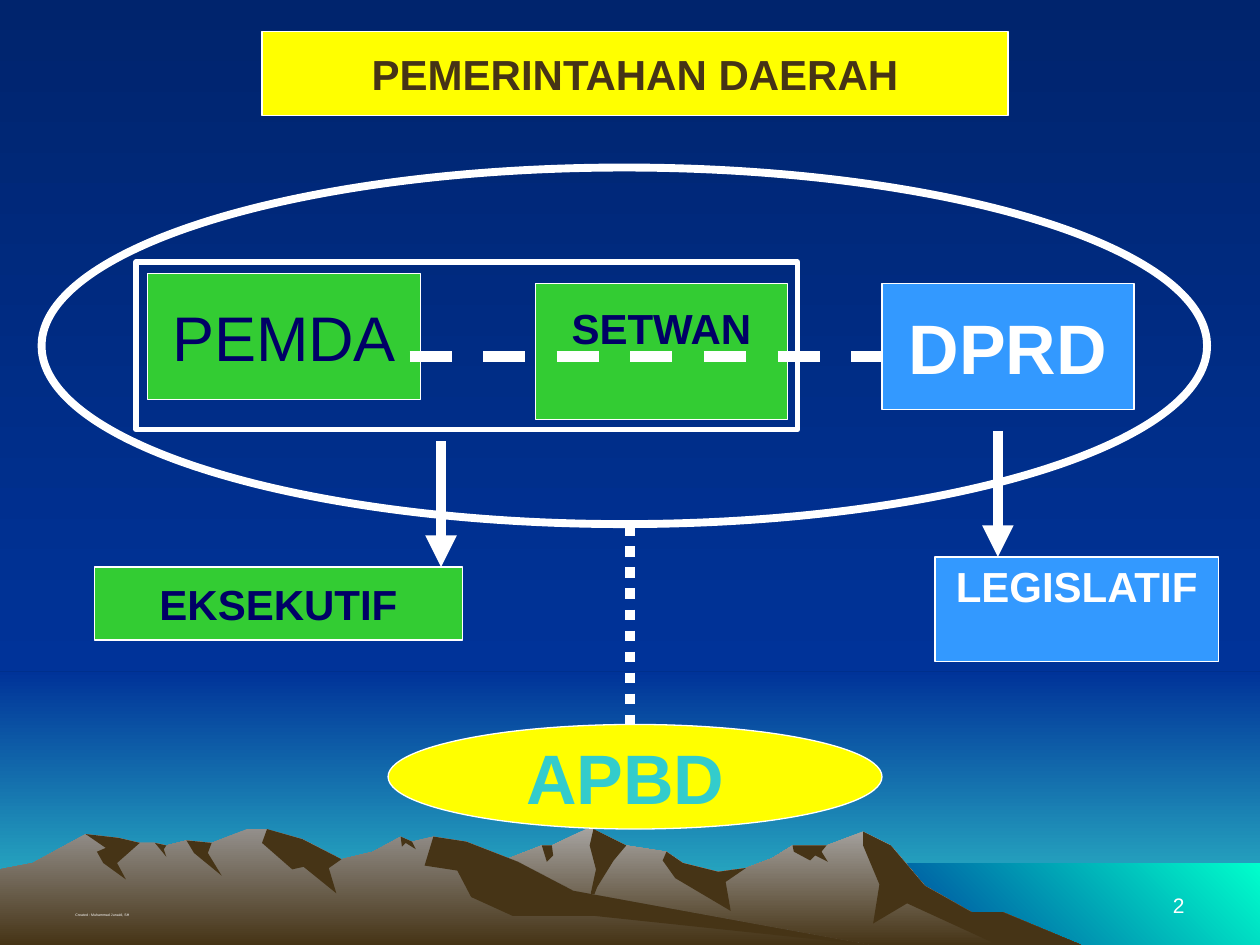
"""Build the slide on regional government: executive, legislature and budget."""
from dataclasses import dataclass
from typing import NamedTuple

from lxml.etree import SubElement
from pptx import Presentation
from pptx.dml.color import RGBColor
from pptx.enum.dml import MSO_LINE
from pptx.enum.shapes import MSO_CONNECTOR, MSO_SHAPE
from pptx.enum.text import MSO_ANCHOR, PP_ALIGN
from pptx.oxml.ns import qn
from pptx.util import Pt

PX = 9144
WIDTH, HEIGHT, HORIZON = 1000, 750, 533


@dataclass(frozen=True)
class Theme:
    """Hold the colours, font and type sizes."""
    font: str = "Arial"
    night: str = "00246D"
    blue: str = "003399"
    turquoise: str = "33CCCC"
    sea: str = "00FFCC"
    near_rock: str = "938F8B"
    far_rock: str = "A5A29F"
    earth: str = "463416"
    yellow: str = "FFFF00"
    green: str = "33CC33"
    azure: str = "3399FF"
    navy: str = "000066"
    white: str = "FFFFFF"
    credit: int = 2
    number: int = 12
    label: int = 24
    branch: int = 36
    heading: int = 40


THEME = Theme()


class Shade(NamedTuple):
    """Describe a dark face hanging from the skyline between two x positions."""
    left: int
    right: int
    lower_edge: tuple


class Range(NamedTuple):
    """Describe a mountain range by its rock, its skyline and its dark faces."""
    rock: str
    skyline: tuple
    shades: tuple


FAR_RANGE = Range(
    THEME.far_rock,
    ((258, 750), (327, 709), (394, 685), (430, 671), (438, 671), (465, 658), (471, 658),
     (497, 671), (529, 676), (542, 685), (570, 692), (592, 689), (613, 681), (629, 671),
     (656, 671), (685, 660), (707, 671), (734, 703), (771, 724), (796, 724), (858, 750)),
    (Shade(430, 438, ((439, 679), (434, 684))),
     Shade(471, 497, ((487, 683), (474, 704), (465, 727), (473, 690), (468, 671))),
     Shade(529, 592, ((576, 700), (580, 723), (536, 697), (526, 683))),
     Shade(629, 656, ((652, 676), (657, 684), (647, 679), (643, 683), (630, 676))),
     Shade(685, 858, ((792, 750), (720, 717), (693, 733), (698, 702), (685, 671)))))

NEAR_RANGE = Range(
    THEME.near_rock,
    ((0, 690), (26, 685), (68, 662), (94, 665), (111, 669), (123, 669), (132, 671),
     (148, 667), (168, 669), (196, 658), (212, 658), (240, 666), (271, 682), (296, 676),
     (318, 664), (327, 668), (344, 664), (370, 668), (411, 684), (455, 707), (690, 750)),
    (Shade(68, 111, ((93, 685), (100, 698), (82, 685), (77, 676), (84, 673))),
     Shade(123, 132, ((130, 674), (132, 680))),
     Shade(148, 168, ((165, 677), (176, 695), (154, 677))),
     Shade(212, 271, ((261, 689), (267, 709), (241, 688), (232, 690), (208, 669))),
     Shade(318, 327, ((330, 674), (322, 669), (319, 672))),
     Shade(344, 690, ((472, 727), (407, 727), (374, 712), (363, 691), (337, 687)))))


def rgb(value):
    """Turn a hex string into a colour."""
    return RGBColor.from_string(value)


def lengths(*values):
    """Turn px into EMU."""
    return [value * PX for value in values]


def paint(fill, *colours, angle=270):
    """Fill with nothing, one colour or a gradient of two."""
    if not colours:
        fill.background()
    elif len(colours) == 1:
        fill.solid()
        fill.fore_color.rgb = rgb(colours[0])
    else:
        fill.gradient()
        fill.gradient_angle = angle
        for stop, colour in zip(fill.gradient_stops, colours):
            stop.color.rgb = rgb(colour)


def write(shape, text, *, size=THEME.label, colour=THEME.white, bold=True,
          align=PP_ALIGN.CENTER, anchor=MSO_ANCHOR.MIDDLE, wrap=False, bottom=5):
    """Put formatted text into a shape."""
    frame = shape.text_frame
    frame.word_wrap = wrap
    frame.vertical_anchor = anchor
    frame.margin_bottom = bottom * PX
    paragraph = frame.paragraphs[0]
    paragraph.text = text
    paragraph.alignment = align
    font = paragraph.font
    font.name, font.size, font.bold = THEME.font, Pt(size), bold
    font.color.rgb = rgb(colour)


def add_panel(slide, box, *colours, kind=MSO_SHAPE.RECTANGLE, outline=0.75, angle=270):
    """Add a preset shape with an optional fill and white outline."""
    panel = slide.shapes.add_shape(kind, *lengths(*box))
    panel.shadow.inherit = False
    paint(panel.fill, *colours, angle=angle)
    if outline:
        panel.line.color.rgb = rgb(THEME.white)
        panel.line.width = Pt(outline)
    else:
        panel.line.fill.background()
    return panel


def add_block(slide, text, box, fill, kind=MSO_SHAPE.RECTANGLE, **style):
    """Add a filled panel that carries a label."""
    write(add_panel(slide, box, fill, kind=kind), text, **style)


def add_rock(slide, points, *colours):
    """Add a closed piece of mountain."""
    builder = slide.shapes.build_freeform(*points[0], scale=PX)
    builder.add_line_segments(points[1:], close=True)
    rock = builder.convert_to_shape()
    rock.shadow.inherit = False
    paint(rock.fill, *colours)
    rock.line.fill.background()


def add_range(slide, mountains):
    """Stand a skyline on the slide's foot and hang its dark faces from it."""
    skyline = mountains.skyline
    foot = ((skyline[-1][0], HEIGHT), (skyline[0][0], HEIGHT))
    add_rock(slide, skyline + foot, mountains.rock, THEME.earth)
    for shade in mountains.shades:
        crest = tuple(point for point in skyline if shade.left <= point[0] <= shade.right)
        add_rock(slide, crest + shade.lower_edge, THEME.earth)


def add_link(slide, start, end, *, dash=None, arrow=False):
    """Add a thick white line, dashed or with an arrowhead."""
    link = slide.shapes.add_connector(MSO_CONNECTOR.STRAIGHT, *lengths(*start, *end))
    link.line.color.rgb = rgb(THEME.white)
    link.line.width = Pt(6)
    if dash:
        link.line.dash_style = dash
    if arrow:
        SubElement(link.line._get_or_add_ln(), qn("a:tailEnd"), type="triangle")
    SubElement(link._element.spPr, qn("a:effectLst"))


def add_footer(slide, left, text, **style):
    """Add a line of text at the foot of the slide."""
    footer = slide.shapes.add_textbox(*lengths(left, 683, 233, 50))
    write(footer, text, bold=False, anchor=MSO_ANCHOR.BOTTOM, wrap=True, **style)


def add_landscape(slide):
    """Draw the sky, sea and mountains."""
    t = THEME
    paint(slide.background.fill, t.night, t.blue)
    add_panel(slide, (0, HORIZON, WIDTH, HEIGHT - HORIZON), t.blue, t.turquoise, outline=0)
    add_panel(slide, (0, 0, WIDTH, HORIZON), t.night, t.blue, outline=0)
    add_panel(slide, (683, 685, 317, 65), t.blue, t.sea, outline=0, angle=45)
    for mountains in (FAR_RANGE, NEAR_RANGE):
        add_range(slide, mountains)


def add_diagram(slide):
    """Draw the branches of government and their links."""
    t = THEME
    oval = MSO_SHAPE.OVAL
    raised = 43
    add_block(slide, "PEMERINTAHAN DAERAH", (208, 25, 592, 67), t.yellow, colour=t.earth)
    add_block(slide, "PEMDA", (117, 217, 217, 100), t.green,
              size=t.branch, colour=t.navy, bold=False)
    add_block(slide, "DPRD", (700, 225, 200, 100), t.azure, size=t.heading)
    add_panel(slide, (33, 133, 925, 283), kind=oval, outline=4.5)
    add_block(slide, "APBD ", (308, 575, 392, 83), t.yellow, oval,
              size=t.heading, colour=t.turquoise)
    add_link(slide, (500, 417), (500, 575), dash=MSO_LINE.ROUND_DOT)
    add_block(slide, "SETWAN", (425, 225, 200, 108), t.green, colour=t.navy, bottom=raised)
    add_link(slide, (325, 283), (700, 283), dash=MSO_LINE.DASH)
    add_panel(slide, (108, 208, 525, 133), outline=3)
    for x, top in ((350, 350), (792, 342)):
        add_link(slide, (x, top), (x, top + 100), arrow=True)
    add_block(slide, "EKSEKUTIF", (75, 450, 292, 58), t.green, colour=t.navy)
    add_block(slide, "LEGISLATIF", (742, 442, 225, 83), t.azure, bottom=raised)


def main():
    """Build and save the slide."""
    deck = Presentation()
    deck.slide_width, deck.slide_height = lengths(WIDTH, HEIGHT)
    slide = deck.slides.add_slide(deck.slide_layouts[6])
    add_landscape(slide)
    add_footer(slide, 50, "Created : Muhammad Junaidi, SH", size=THEME.credit,
               align=PP_ALIGN.LEFT)
    add_footer(slide, 717, "2", size=THEME.number, align=PP_ALIGN.RIGHT)
    add_diagram(slide)
    deck.save("out.pptx")


if __name__ == "__main__":
    main()
